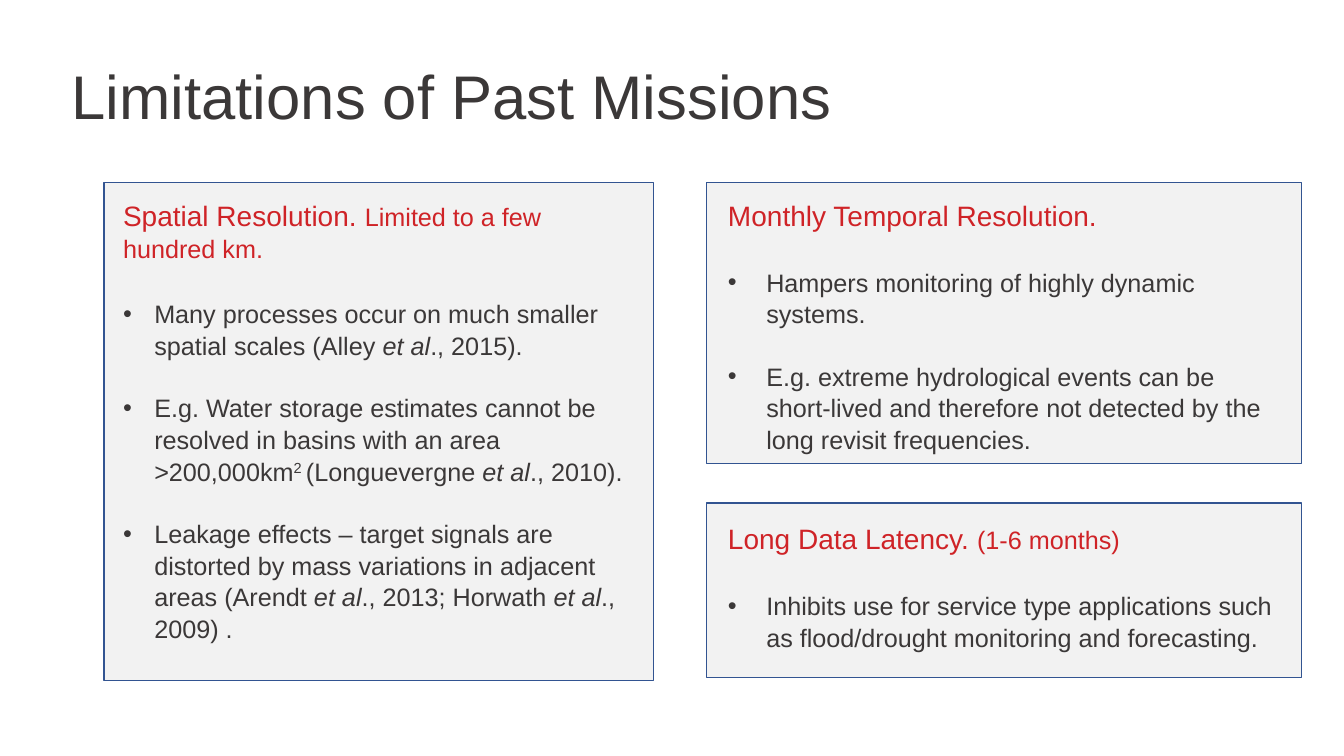
from lxml import etree
from pptx import Presentation
from pptx import util as u
from pptx.dml.color import RGBColor
from pptx.enum import shapes, text
from pptx.oxml.ns import qn

WIDTH, HEIGHT = 13.33, 7.5
FONT, DARK, RED, PANEL, BORDER = "Arial", "3B3838", "CF2327", "F2F2F2", "325491"
HEAD_SIZE, BODY_SIZE = 20, 18
HEAD_GAP, ITEM_GAP = 24, 21.7
LINE_SPACING = 1.05

TITLE = "Limitations of Past Missions"
TITLE_BOX = (0.61, 0.26, 11.5, 1.45)
LEFT_COL, RIGHT_COL = (1.03, 5.45), (7.01, 5.9)  # left edge, width
TOP_ROW = 1.81

# Each item is a list of (words, style) runs.
SECTIONS = [
    dict(panel=(LEFT_COL[0], TOP_ROW, LEFT_COL[1], 4.94),
         body=(1.12, 1.9, 5.25, 4.41), indent=0.31,
         head="Spatial Resolution. ", note="Limited to a few hundred km.",
         items=[
             [("Many processes occur on much smaller spatial scales (Alley ", ""),
              ("et al", "italic"), ("., 2015).", "")],
             [("E.g. Water storage estimates cannot be resolved in basins "
               "with an area >200,000km", ""), ("2 ", "super"),
              ("(Longuevergne ", ""), ("et al", "italic"), ("., 2010).", "")],
             [("Leakage effects – target signals are distorted by mass "
               "variations in adjacent areas (Arendt ", ""),
              ("et al", "italic"), ("., 2013; Horwath ", ""),
              ("et al", "italic"), ("., 2009) .", "")],
         ]),
    dict(panel=(RIGHT_COL[0], TOP_ROW, RIGHT_COL[1], 2.79),
         body=(7.12, 1.9, 5.61, 2.59), indent=0.38,
         head="Monthly Temporal Resolution.", note="",
         items=[
             [("Hampers monitoring of highly dynamic systems.", "")],
             [("E.g. extreme hydrological events can be short-lived and "
               "therefore not detected by the long revisit frequencies.", "")],
         ]),
    dict(panel=(RIGHT_COL[0], 4.99, RIGHT_COL[1], 1.73),
         body=(7.12, 5.11, 5.9, 1.38), indent=0.38,
         head="Long Data Latency. ", note="(1-6 months)",
         items=[
             [("Inhibits use for service type applications such as "
               "flood/drought monitoring and forecasting.", "")],
         ]),
]


def rgb(value):
    return RGBColor.from_string(value)


def place(sp, box):
    sp.left, sp.top, sp.width, sp.height = (u.Inches(v) for v in box)


def add_run(p, words, size, color, style=""):
    r = p.add_run()
    r.text = words
    f = r.font
    f.name, f.size, f.bold = FONT, u.Pt(size), False
    f.color.rgb = rgb(color)
    if style == "italic":
        f.italic = True
    elif style == "super":
        r._r.get_or_add_rPr().set("baseline", "30000")


def format_paragraph(p, before=0, indent=0):
    """Set spacing; a non-zero indent makes the paragraph a bullet."""
    p.alignment = text.PP_ALIGN.LEFT
    p.line_spacing = LINE_SPACING
    p.space_before, p.space_after = u.Pt(before), u.Pt(0)
    pPr = p._p.get_or_add_pPr()
    pPr.set("marL", str(u.Inches(indent)))
    pPr.set("indent", str(-u.Inches(indent)))
    if indent:
        etree.SubElement(pPr, qn("a:buFont")).set("typeface", FONT)
        etree.SubElement(pPr, qn("a:buChar")).set("char", "•")
    else:
        etree.SubElement(pPr, qn("a:buNone"))


def add_panel(slide, box):
    """Draw a panel behind the placeholders."""
    sp = slide.shapes.add_shape(shapes.MSO_SHAPE.RECTANGLE,
                                *(u.Inches(v) for v in box))
    sp.shadow.inherit = False
    sp.fill.solid()
    sp.fill.fore_color.rgb = rgb(PANEL)
    sp.line.color.rgb = rgb(BORDER)
    sp.line.width = u.Pt(1)
    slide.shapes._spTree.insert(2, sp._element)


def fill_body(sp, section):
    place(sp, section["body"])
    tf = sp.text_frame
    tf.word_wrap = True
    tf.auto_size = text.MSO_AUTO_SIZE.NONE
    tf.vertical_anchor = text.MSO_ANCHOR.TOP
    p = tf.paragraphs[0]
    format_paragraph(p)
    add_run(p, section["head"], HEAD_SIZE, RED)
    if section["note"]:
        add_run(p, section["note"], BODY_SIZE, RED)
    for i, item in enumerate(section["items"]):
        p = tf.add_paragraph()
        format_paragraph(p, ITEM_GAP if i else HEAD_GAP, section["indent"])
        for words, style in item:
            add_run(p, words, BODY_SIZE, DARK, style)


def main():
    prs = Presentation()
    prs.slide_width, prs.slide_height = u.Inches(WIDTH), u.Inches(HEIGHT)
    slide = prs.slides.add_slide(prs.slide_layouts.get_by_name("Comparison"))

    title = slide.shapes.title
    place(title, TITLE_BOX)
    title.text_frame.vertical_anchor = text.MSO_ANCHOR.MIDDLE
    p = title.text_frame.paragraphs[0]
    p.alignment, p.line_spacing = text.PP_ALIGN.LEFT, 0.9
    add_run(p, TITLE, 44, DARK)

    bodies = [sp for sp in slide.placeholders if sp.placeholder_format.idx in (1, 2, 3, 4)]
    for sp, section in zip(bodies, SECTIONS):
        add_panel(slide, section["panel"])
        fill_body(sp, section)
    for sp in list(slide.placeholders):
        if not sp.text_frame.text:
            sp._element.getparent().remove(sp._element)
    prs.save("out.pptx")


if __name__ == "__main__":
    main()
